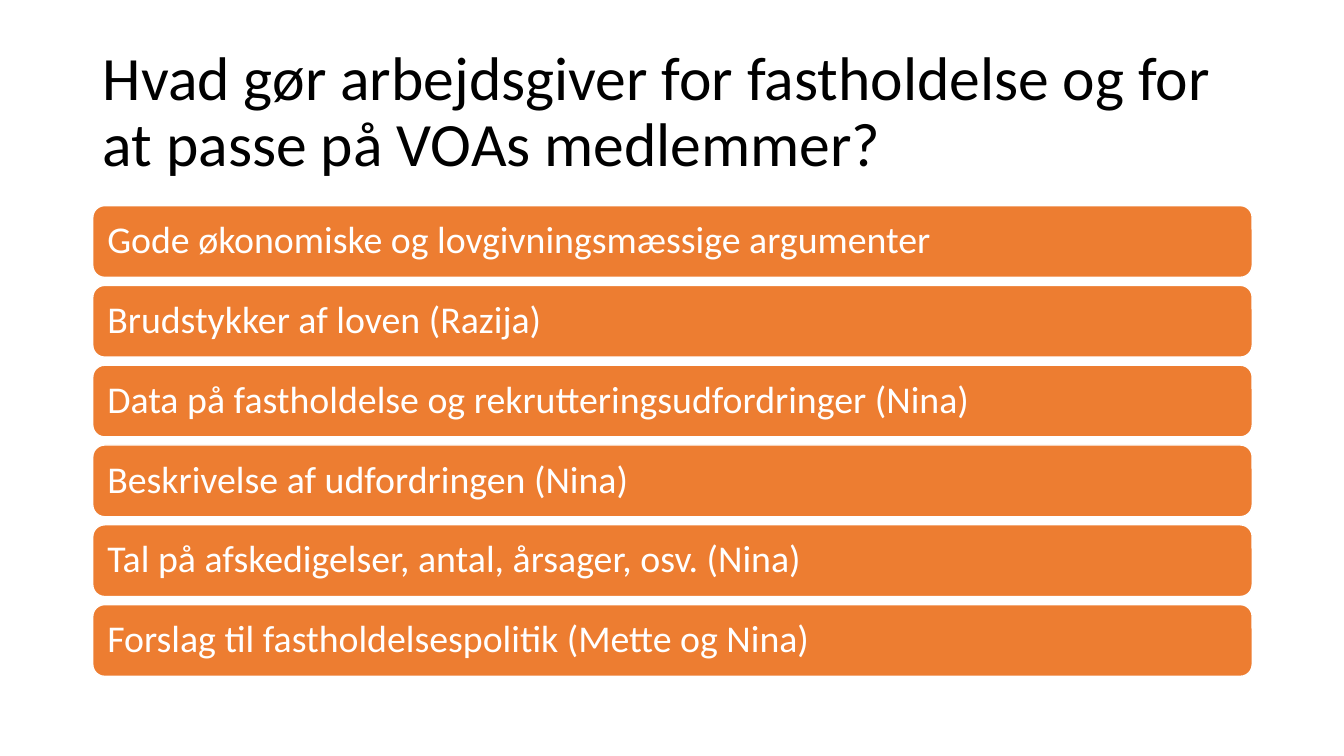
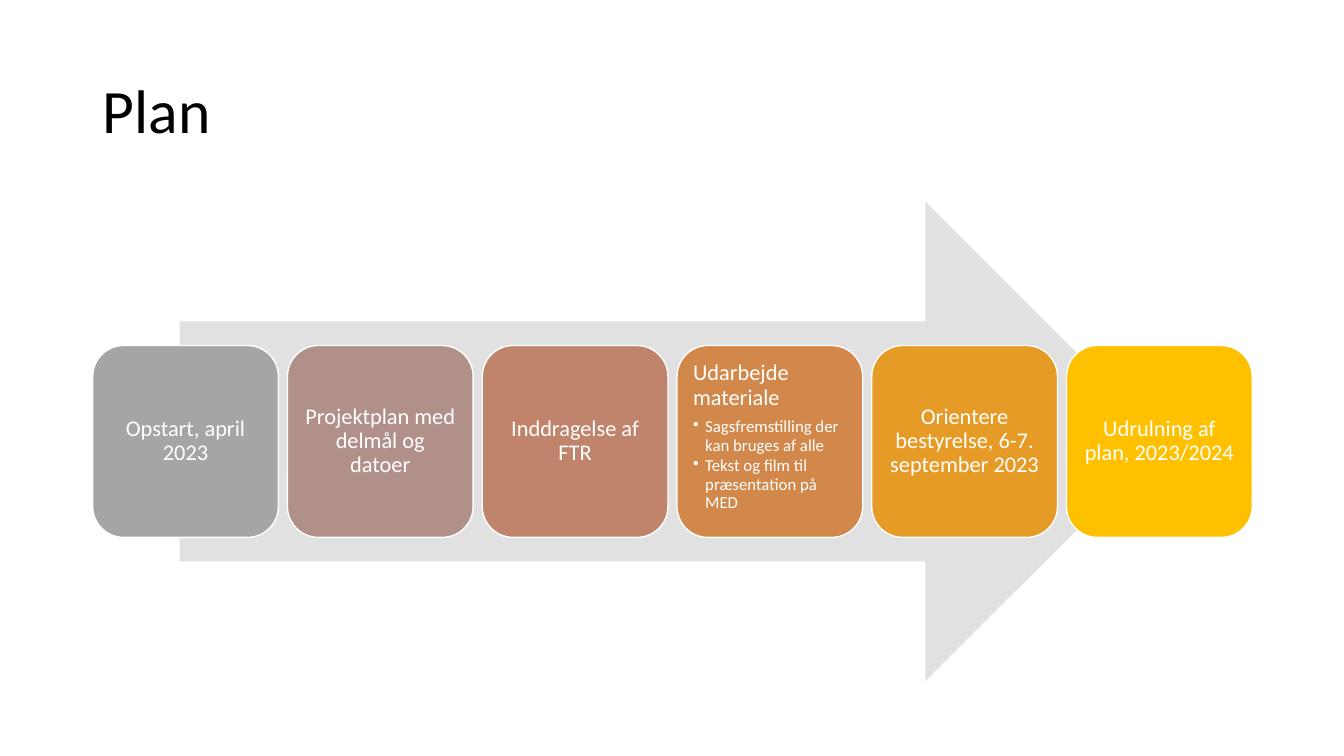
from lxml import etree
from pptx import Presentation
from pptx.dml.color import RGBColor
from pptx.enum.shapes import MSO_SHAPE
from pptx.enum.text import MSO_ANCHOR, MSO_AUTO_SIZE, PP_ALIGN
from pptx.oxml.ns import qn
from pptx.util import Inches, Pt

ROUNDED = MSO_SHAPE.ROUNDED_RECTANGLE
ARROW = MSO_SHAPE.RIGHT_ARROW
TOP, MIDDLE = MSO_ANCHOR.TOP, MSO_ANCHOR.MIDDLE
LEFT, CENTER = PP_ALIGN.LEFT, PP_ALIGN.CENTER

BLACK = RGBColor(0x00, 0x00, 0x00)
WHITE = RGBColor(0xFF, 0xFF, 0xFF)
ORANGE = RGBColor(0xED, 0x7D, 0x31)
ARROW_GREY = RGBColor(0xE1, 0xE1, 0xE1)
STEP_COLOURS = [
    RGBColor(0xA5, 0xA5, 0xA5),
    RGBColor(0xB1, 0x90, 0x8A),
    RGBColor(0xC0, 0x84, 0x6C),
    RGBColor(0xD2, 0x88, 0x4B),
    RGBColor(0xE7, 0x9B, 0x27),
    RGBColor(0xFF, 0xC0, 0x00),
]

FONT = "Calibri"
TITLE_ONLY = 5
MARGIN, CONTENT_WIDTH = 0.92, 11.5
TITLE_BOX = (MARGIN, 0.4, CONTENT_WIDTH, 1.45)
LIST_BOX = (MARGIN, 2.04, CONTENT_WIDTH, 4.67)
PROCESS_BOX = (MARGIN, 2, CONTENT_WIDTH, 4.76)

TOPICS = [
    "Gode økonomiske og lovgivningsmæssige argumenter",
    "Brudstykker af loven (Razija)",
    "Data på fastholdelse og rekrutteringsudfordringer (Nina)",
    "Beskrivelse af udfordringen (Nina)",
    "Tal på afskedigelser, antal, årsager, osv. (Nina)",
    "Forslag til fastholdelsespolitik (Mette og Nina)",
]
STEPS = [
    ("Opstart, april 2023", []),
    ("Projektplan med delmål og datoer", []),
    ("Inddragelse af FTR", []),
    ("Udarbejde materiale", [
        "Sagsfremstilling der kan bruges af alle",
        "Tekst og film til præsentation på MED",
    ]),
    ("Orientere bestyrelse, 6-7. september 2023", []),
    ("Udrulning af plan, 2023/2024", []),
]


def style_paragraph(paragraph, text, size, colour, alignment=LEFT):
    """Write text in the shared font and line spacing."""
    paragraph.text = text
    paragraph.alignment = alignment
    paragraph.line_spacing = 0.9
    paragraph.font.name = FONT
    paragraph.font.size = Pt(size)
    paragraph.font.color.rgb = colour


def add_bullet(paragraph):
    """Give a paragraph a hanging bullet."""
    properties = paragraph._p.get_or_add_pPr()
    properties.set("marL", str(Inches(0.12)))
    properties.set("indent", str(Inches(-0.12)))
    etree.SubElement(properties, qn("a:buChar")).set("char", "•")


def add_titled_slide(presentation, title):
    """Add a slide with the shared title style."""
    slide = presentation.slides.add_slide(presentation.slide_layouts[TITLE_ONLY])
    shape = slide.shapes.title
    shape.left, shape.top, shape.width, shape.height = map(Inches, TITLE_BOX)
    frame = shape.text_frame
    frame.auto_size = MSO_AUTO_SIZE.NONE
    frame.vertical_anchor = MIDDLE
    style_paragraph(frame.paragraphs[0], title, 44, BLACK)
    return slide


def add_filled_shape(slide, kind, box, colour):
    """Add a flat preset shape without an outline."""
    shape = slide.shapes.add_shape(kind, *map(Inches, box))
    shape.shadow.inherit = False
    shape.fill.solid()
    shape.fill.fore_color.rgb = colour
    shape.line.fill.background()
    return shape


def add_panel(slide, box, colour, inset, text, size, alignment, anchor=MIDDLE):
    """Add a rounded, white-edged panel with text and return its text frame."""
    panel = add_filled_shape(slide, ROUNDED, box, colour)
    panel.line.color.rgb = WHITE
    panel.line.width = Pt(1)
    frame = panel.text_frame
    frame.word_wrap = True
    frame.vertical_anchor = anchor
    frame.margin_left = frame.margin_right = Inches(inset)
    frame.margin_top = frame.margin_bottom = Inches(inset)
    style_paragraph(frame.paragraphs[0], text, size, WHITE, alignment)
    return frame


def add_topic_list(slide, box, topics):
    """Stack one bar per topic in the box."""
    left, top, width, height = box
    gap = 0.08
    bar_height = (height - gap * (len(topics) - 1)) / len(topics)
    for index, topic in enumerate(topics):
        bar_top = top + index * (bar_height + gap)
        add_panel(slide, (left, bar_top, width, bar_height), ORANGE, 0.11, topic, 27, LEFT)


def add_process(slide, box, steps):
    """Lay a row of step cards over a wide arrow."""
    left, top, width, height = box
    arrow_width = width * 0.85
    arrow_left = left + (width - arrow_width) / 2
    add_filled_shape(slide, ARROW, (arrow_left, top, arrow_width, height), ARROW_GREY)
    gap = 0.09
    card_width = (width - gap * (len(steps) - 1)) / len(steps)
    card_height = height * 0.4
    card_top = top + (height - card_height) / 2
    for index, ((heading, details), colour) in enumerate(zip(steps, STEP_COLOURS)):
        card = (left + index * (card_width + gap), card_top, card_width, card_height)
        alignment, anchor = (LEFT, TOP) if details else (CENTER, MIDDLE)
        frame = add_panel(slide, card, colour, 0.07, heading, 16, alignment, anchor)
        if details:
            frame.paragraphs[0].space_after = Pt(6)
        for detail in details:
            paragraph = frame.add_paragraph()
            style_paragraph(paragraph, detail, 12, WHITE)
            paragraph.level = 1
            paragraph.space_after = Pt(2)
            add_bullet(paragraph)


def main():
    """Build and save the presentation."""
    presentation = Presentation()
    presentation.slide_width = Inches(13.33)
    presentation.slide_height = Inches(7.5)
    slide = add_titled_slide(
        presentation,
        "Hvad gør arbejdsgiver for fastholdelse og for at passe på VOAs medlemmer?",
    )
    add_topic_list(slide, LIST_BOX, TOPICS)
    slide = add_titled_slide(presentation, "Plan")
    add_process(slide, PROCESS_BOX, STEPS)
    presentation.save("out.pptx")


if __name__ == "__main__":
    main()
